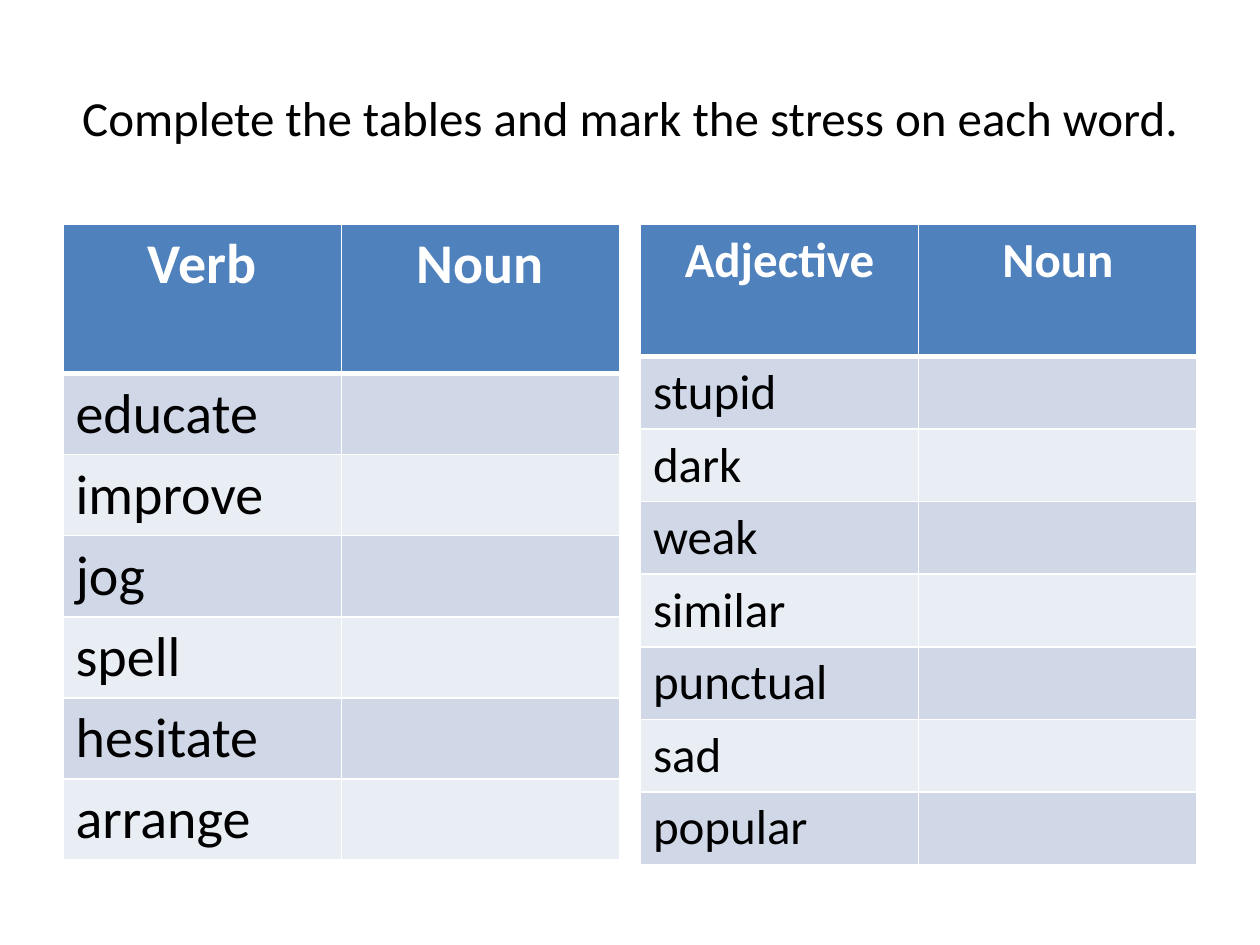
from lxml.etree import SubElement
from pptx import Presentation
from pptx.dml.color import RGBColor
from pptx.enum.text import MSO_ANCHOR, PP_ALIGN
from pptx.oxml.ns import qn
from pptx.util import Cm, Pt

TITLE = "Complete the tables and mark the stress on each word."
TABLES = [
    {"header": ["Verb", "Noun"], "size": 32, "header_h": 3.01, "row_h": 1.63,
     "words": ["educate", "improve", "jog", "spell", "hesitate", "arrange"]},
    {"header": ["Adjective", "Noun"], "size": 28, "header_h": 2.67, "row_h": 1.46,
     "words": ["stupid", "dark", "weak", "similar", "punctual", "sad", "popular"]},
]
THEME = {"font": "Calibri", "title": 28, "text": "000000", "header_text": "FFFFFF",
         "header": "4F81BD", "bands": ["D0D8E8", "E9EDF4"],
         "border": "FFFFFF", "thin": 1, "thick": 3}
MARGIN, TOP, COL_W, GAP = 1.27, 4.52, 5.61, 0.42


def set_text(tf, text, align, **fmt):
    p = tf.paragraphs[0]
    p.alignment = align
    r = p.add_run()
    r.text = text
    r.font.color.rgb = RGBColor.from_string(fmt.pop("color"))
    for name, value in fmt.items():
        setattr(r.font, name, value)


def set_borders(cell, widths):
    tcPr = cell._tc.get_or_add_tcPr()
    for side, width in widths.items():
        ln = SubElement(tcPr, qn(f"a:ln{side}"), w=str(Pt(width)))
        fill = SubElement(ln, qn("a:solidFill"))
        SubElement(fill, qn("a:srgbClr"), val=THEME["border"])


def add_word_table(s, left, data):
    rows = [data["header"]] + [[word, ""] for word in data["words"]]
    heights = [data["header_h"]] + [data["row_h"]] * len(data["words"])
    table = s.shapes.add_table(len(rows), 2, Cm(left), Cm(TOP),
                               Cm(2 * COL_W), Cm(sum(heights))).table
    for i, (row, height) in enumerate(zip(rows, heights)):
        table.rows[i].height = Cm(height)
        head = i == 0
        color = THEME["header"] if head else THEME["bands"][(i - 1) % 2]
        for j, text in enumerate(row):
            cell = table.cell(i, j)
            set_borders(cell, {"L": THEME["thin"], "R": THEME["thin"],
                               "T": THEME["thick" if i == 1 else "thin"],
                               "B": THEME["thick" if head else "thin"]})
            cell.fill.solid()
            cell.fill.fore_color.rgb = RGBColor.from_string(color)
            if text:
                set_text(cell.text_frame, text, PP_ALIGN.CENTER if head else PP_ALIGN.LEFT,
                         name=THEME["font"], size=Pt(data["size"]), bold=head,
                         color=THEME["header_text" if head else "text"])


def main():
    prs = Presentation()
    prs.slide_width, prs.slide_height = Cm(25.4), Cm(19.05)
    s = prs.slides.add_slide(prs.slide_layouts[5])
    title = s.shapes.title
    box = {"left": MARGIN, "top": 0.76, "width": 22.86, "height": 3.18}
    for name, value in box.items():
        setattr(title, name, Cm(value))
    title.text_frame.vertical_anchor = MSO_ANCHOR.MIDDLE
    set_text(title.text_frame, TITLE, PP_ALIGN.CENTER, name=THEME["font"],
             size=Pt(THEME["title"]), color=THEME["text"])
    for i, data in enumerate(TABLES):
        add_word_table(s, MARGIN + i * (2 * COL_W + GAP), data)
    prs.save("out.pptx")


if __name__ == "__main__":
    main()
